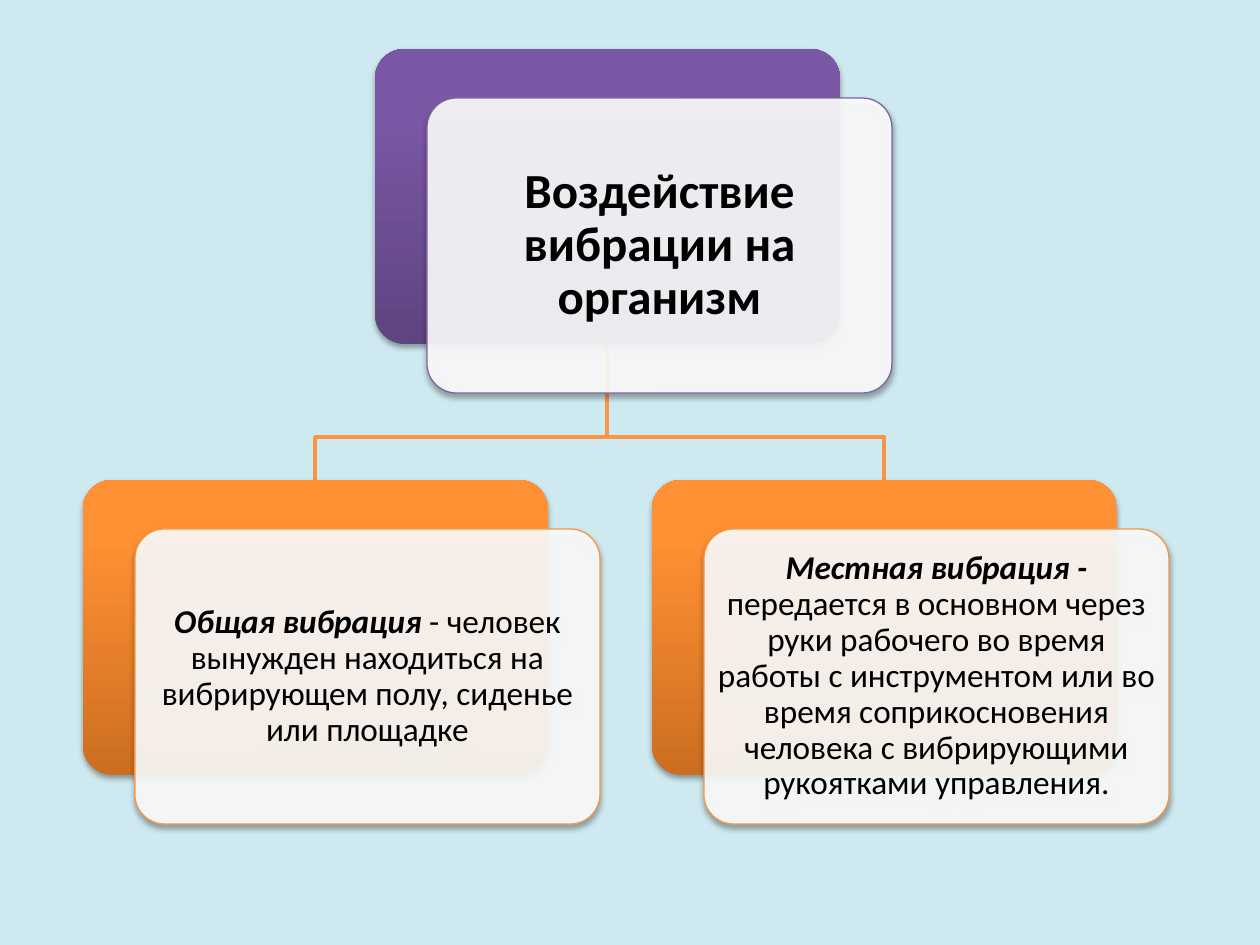
import copy

import pptx
import pptx.dml.color
import pptx.enum.shapes
import pptx.enum.text
import pptx.oxml
import pptx.oxml.ns
import pptx.util

PX = 914400 / 126
CARD_WIDTH, CARD_HEIGHT = 465, 295
OFFSET_X, OFFSET_Y = 52, 49
ELBOW_Y = 437
SHADOW = (
    f'<a:effectLst {pptx.oxml.ns.nsdecls("a")}>'
    '<a:outerShdw blurRad="39370" dist="22860" dir="5400000" rotWithShape="0">'
    '<a:srgbClr val="000000"><a:alpha val="35000"/></a:srgbClr>'
    '</a:outerShdw></a:effectLst>'
)
PURPLE = {"line": "8064A2", "stops": [(0, "5F4480"), (0.8, "7B58A6"), (1, "7C57A8")]}
ORANGE = {"line": "F79646", "stops": [(0, "CC6E20"), (0.8, "FF9034"), (1, "FF9136")]}
BOLD = {"bold": True, "italic": False}
BOLD_ITALIC = {"bold": True, "italic": True}
REGULAR = {"bold": False, "italic": False}


def color(value):
    return pptx.dml.color.RGBColor.from_string(value)


def add_card(slide, left, top):
    shape = slide.shapes.add_shape(
        pptx.enum.shapes.MSO_SHAPE.ROUNDED_RECTANGLE,
        *(round(length * PX) for length in (left, top, CARD_WIDTH, CARD_HEIGHT)))
    shape.adjustments[0] = 0.1
    return shape


presentation = pptx.Presentation()
presentation.slide_width = pptx.util.Inches(10)
presentation.slide_height = pptx.util.Inches(7.5)
slide = presentation.slides.add_slide(presentation.slide_layouts[6])
slide.background.fill.solid()
slide.background.fill.fore_color.rgb = color("CEE9EF")

# Hierarchy: the root first, then its two branches
root = {"left": 375, "top": 49, "theme": PURPLE, "size": 28, "inset": 6,
        "runs": [("Воздействие вибрации на организм", BOLD)]}
branches = [
    {"left": 83, "top": 480, "theme": ORANGE, "size": 19, "inset": 1,
     "runs": [("Общая вибрация ", BOLD_ITALIC),
              ("- человек вынужден находиться на вибрирующем полу, сиденье "
               "или площадке", REGULAR)]},
    {"left": 652, "top": 480, "theme": ORANGE, "size": 19, "inset": 1,
     "runs": [("Местная вибрация -", BOLD_ITALIC),
              (" передается в основном через руки рабочего во время работы с "
               "инструментом или во время соприкосновения человека с "
               "вибрирующими рукоятками управления.", REGULAR)]},
]

# Elbow lines from the root down to each branch
root_x = root["left"] + CARD_WIDTH // 2
for branch in reversed(branches):
    branch_x = branch["left"] + CARD_WIDTH // 2
    builder = slide.shapes.build_freeform(root_x, root["top"] + CARD_HEIGHT, scale=PX)
    builder.add_line_segments(
        [(root_x, ELBOW_Y), (branch_x, ELBOW_Y), (branch_x, branch["top"])], close=False)
    elbow = builder.convert_to_shape()
    elbow.fill.background()
    elbow.line.color.rgb = color(ORANGE["line"])
    elbow.line.width = pptx.util.Pt(2)
    elbow.shadow.inherit = False

for node in [root, *branches]:
    # Gradient card behind
    back = add_card(slide, node["left"], node["top"])
    back.line.fill.background()
    back.fill.gradient()
    back.fill.gradient_angle = 90
    stop_list = back.element.spPr.find(".//" + pptx.oxml.ns.qn("a:gsLst"))
    stop_list.append(copy.deepcopy(stop_list[-1]))
    for stop, (position, value) in zip(back.fill.gradient_stops, node["theme"]["stops"]):
        stop.position = position
        stop.color.rgb = color(value)

    # Translucent white card in front
    front = add_card(slide, node["left"] + OFFSET_X, node["top"] + OFFSET_Y)
    front.fill.solid()
    front.fill.fore_color.rgb = color("FFFFFF")
    white = front.element.spPr.find(".//" + pptx.oxml.ns.qn("a:srgbClr"))
    white.append(pptx.oxml.parse_xml(
        f'<a:alpha {pptx.oxml.ns.nsdecls("a")} val="90000"/>'))
    front.line.color.rgb = color(node["theme"]["line"])
    front.line.width = pptx.util.Pt(0.75)

    for shape in (back, front):
        shape.element.spPr.append(pptx.oxml.parse_xml(SHADOW))

    # Card text
    frame = front.text_frame
    frame.word_wrap = True
    frame.vertical_anchor = pptx.enum.text.MSO_ANCHOR.MIDDLE
    for side in ("left", "top", "right", "bottom"):
        setattr(frame, f"margin_{side}", round(node["inset"] * PX))
    paragraph = frame.paragraphs[0]
    paragraph.alignment = pptx.enum.text.PP_ALIGN.CENTER
    paragraph.line_spacing = 0.9
    for text, style in node["runs"]:
        run = paragraph.add_run()
        run.text = text
        run.font.color.rgb = color("000000")
        font_values = {"name": "Calibri", "size": pptx.util.Pt(node["size"]), **style}
        for name, value in font_values.items():
            setattr(run.font, name, value)

presentation.save("out.pptx")
